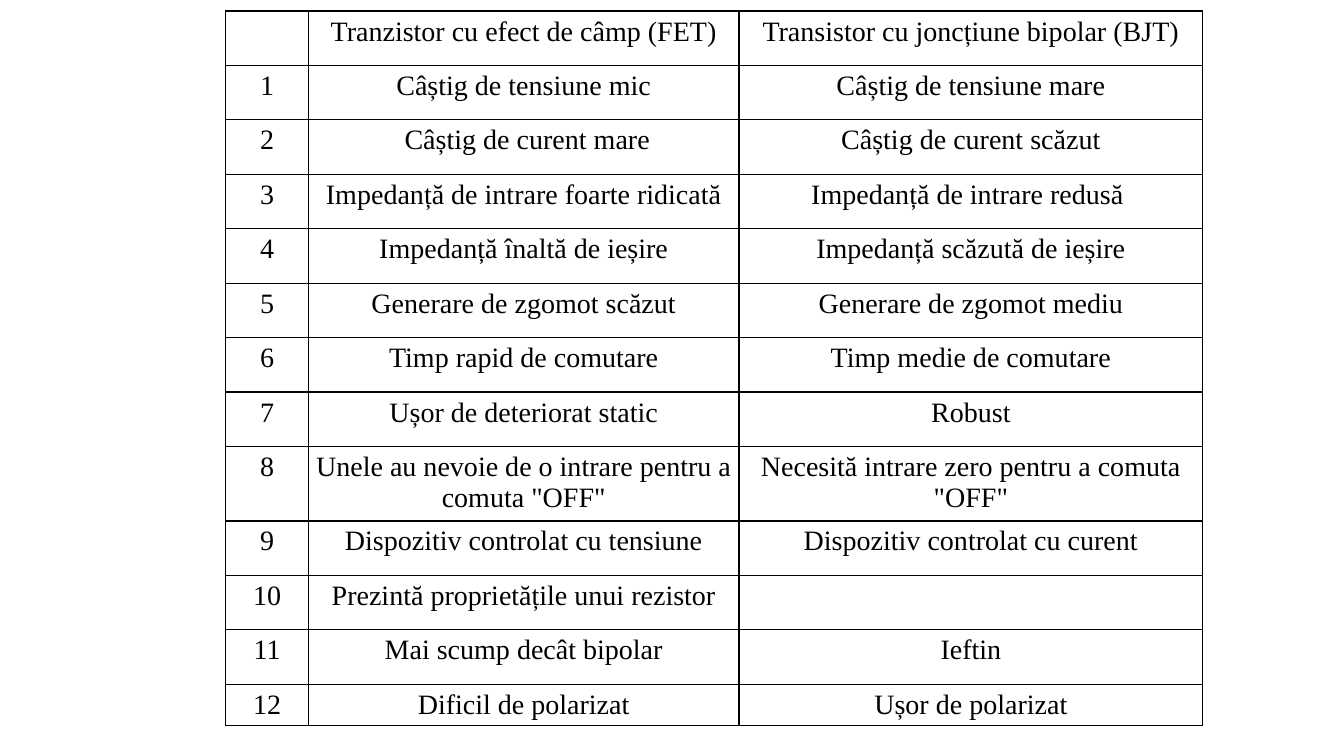
from lxml.etree import SubElement
from pptx import Presentation
from pptx.dml.color import RGBColor
from pptx.enum.text import PP_ALIGN
from pptx.oxml.ns import qn
from pptx.util import Inches, Pt

BLACK = RGBColor(0x00, 0x00, 0x00)

HEADER = ("", "Tranzistor cu efect de câmp (FET)", "Transistor cu joncțiune bipolar (BJT)")
COMPARISONS = [
    ("Câștig de tensiune mic", "Câștig de tensiune mare"),
    (" Câștig de curent mare", "Câștig de curent scăzut"),
    ("Impedanță de intrare foarte ridicată", "Impedanță de intrare redusă "),
    ("Impedanță înaltă de ieșire", "Impedanță scăzută de ieșire"),
    ("Generare de zgomot scăzut", "Generare de zgomot mediu"),
    ("Timp rapid de comutare", "Timp medie de comutare"),
    ("Ușor de deteriorat static", "Robust"),
    ('Unele au nevoie de o intrare pentru a comuta "OFF"',
     'Necesită intrare zero pentru a comuta "OFF"'),
    ("Dispozitiv controlat cu tensiune", "Dispozitiv controlat cu curent"),
    ("Prezintă proprietățile unui rezistor", ""),
    ("Mai scump decât bipolar", "Ieftin"),
    ("Dificil de polarizat", "Ușor de polarizat"),
]
COLUMN_WIDTHS = (0.82, 4.27, 4.6)
ROW_HEIGHT = 0.54
SPECIAL_HEIGHTS = {8: 0.74, 12: 0.4}


class SlideBuilder:
    font_format = {"name": "Times New Roman", "size": Pt(20)}
    cell_format = {
        "margin_left": Inches(0.02),
        "margin_right": Inches(0.02),
        "margin_top": Inches(0.05),
        "margin_bottom": Inches(0.05),
    }
    border_width = Pt(1)

    def __init__(self, slide):
        self.slide = slide

    def add_table(self, rows, left, top, column_widths, row_heights):
        table = self.slide.shapes.add_table(
            len(rows), len(column_widths), Inches(left), Inches(top),
            Inches(sum(column_widths)), Inches(sum(row_heights))).table
        table.first_row = False
        table.horz_banding = False
        for column, width in zip(table.columns, column_widths):
            column.width = Inches(width)
        for row, height, texts in zip(table.rows, row_heights, rows):
            row.height = Inches(height)
            for cell, text in zip(row.cells, texts):
                self.format_cell(cell, text)

    def format_cell(self, cell, text):
        for name, value in self.cell_format.items():
            setattr(cell, name, value)
        self.add_borders(cell)
        cell.fill.background()
        paragraph = cell.text_frame.paragraphs[0]
        paragraph.alignment = PP_ALIGN.CENTER
        if text:
            font = self.add_run(paragraph, text).font
            font.color.rgb = BLACK

    def add_run(self, paragraph, text):
        run = paragraph.add_run()
        run.text = text
        for name, value in self.font_format.items():
            setattr(run.font, name, value)
        return run

    def add_borders(self, cell):
        properties = cell._tc.get_or_add_tcPr()
        for side in ("lnL", "lnR", "lnT", "lnB"):
            line = SubElement(properties, qn(f"a:{side}"), w=str(self.border_width))
            fill = SubElement(line, qn("a:solidFill"))
            SubElement(fill, qn("a:srgbClr"), val=str(BLACK))


def main():
    presentation = Presentation()
    presentation.slide_width = Inches(13.33)
    presentation.slide_height = Inches(7.5)
    builder = SlideBuilder(presentation.slides.add_slide(presentation.slide_layouts[6]))
    rows = [HEADER] + [(str(number), *pair) for number, pair in enumerate(COMPARISONS, 1)]
    row_heights = [SPECIAL_HEIGHTS.get(index, ROW_HEIGHT) for index in range(len(rows))]
    builder.add_table(rows, 2.24, 0.11, COLUMN_WIDTHS, row_heights)
    presentation.save("out.pptx")


if __name__ == "__main__":
    main()
